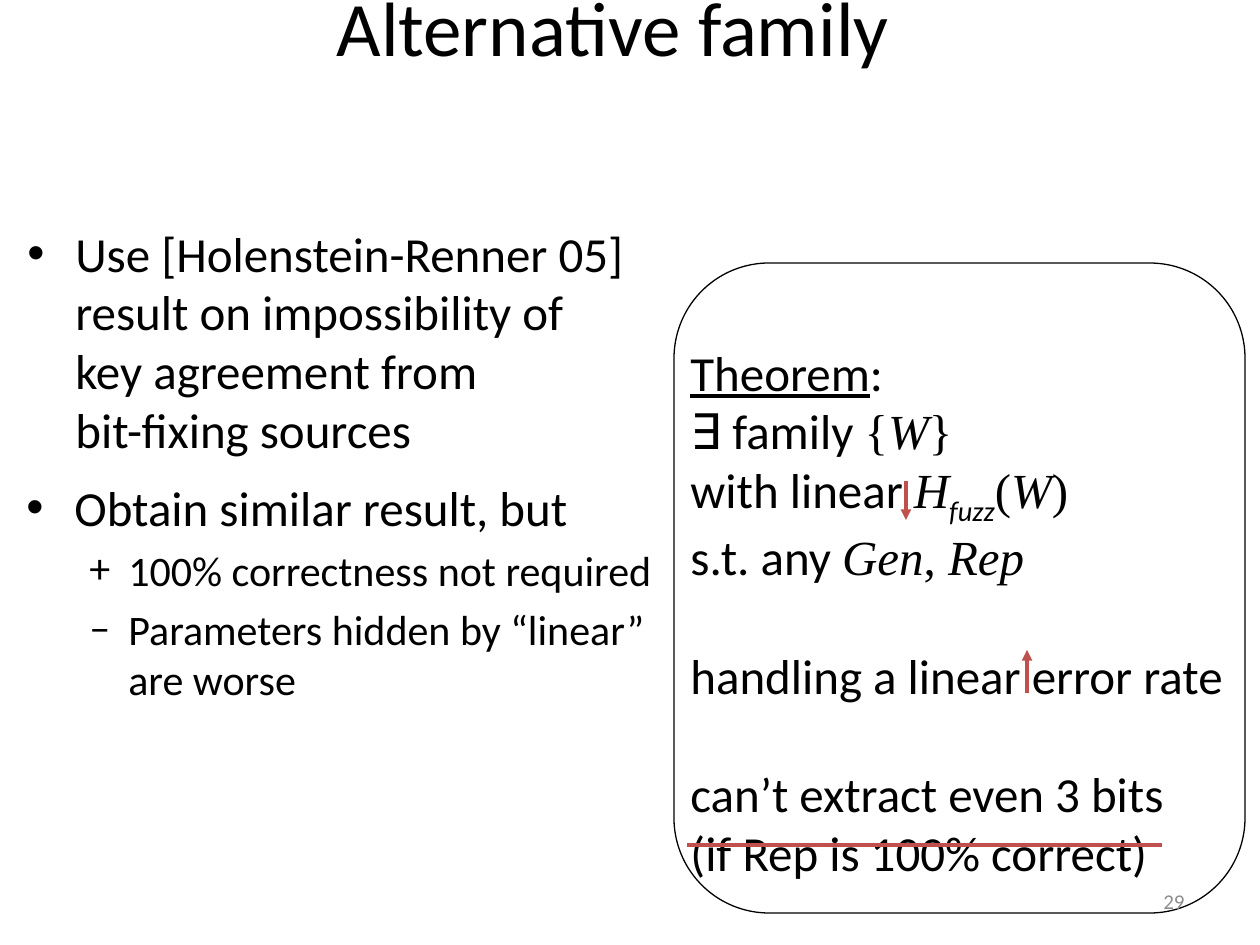
from pptx import Presentation
from pptx.dml.color import RGBColor
from pptx.enum.shapes import MSO_CONNECTOR, MSO_SHAPE
from pptx.enum.text import MSO_ANCHOR, PP_ALIGN
from pptx.oxml.ns import qn
from pptx.util import Emu, Pt
from lxml.etree import SubElement

BLACK, RED, GRAY = "000000", "C0504D", "8C8C8C"
MATH = dict(font="Times New Roman")
VAR = dict(font="Times New Roman", italic=True)

SOURCE_POINT = "Use [Holenstein-Renner 05]\nresult on impossibility of\nkey agreement from\nbit-fixing sources"
RESULT_POINTS = [
    ("Obtain similar result, but", dict(size=28, bullet="•", margin=48, hang=48)),
    ("100% correctness not required", dict(size=24, bullet="+", margin=102, hang=39, level=1, before=4.8)),
    ("Parameters hidden by “linear”\nare worse", dict(size=24, bullet="–", margin=102, hang=39, level=1, before=4.8)),
]
THEOREM = [
    (0, [("Theorem", dict(underline=True)), (":", {})]),
    (0, [("∃ family ", {}), ("{", MATH), ("W", VAR), ("}", MATH)]),
    (0, [("with linear ", {}), ("H", VAR), ("fuzz", dict(italic=True, base=-25000)),
         ("(", MATH), ("W", VAR), (")", MATH)]),
    (0, [("s.t. any ", {}), ("Gen", VAR), (", ", MATH), ("Rep", VAR)]),
    (34, [("handling a linear error rate", {})]),
    (34, [("can’t extract even 3 bits", {})]),
    (0, [("(if Rep is 100% correct)", {})]),
]
LINES = [
    ((687, 845), (1162, 845), False),
    ((906, 520), (906, 481), True),
    ((1027, 650), (1027, 693), True),
]


def px(n):
    return Emu(round(n * 914400 / 126))


def rgb(color):
    return RGBColor.from_string(color)


def add_run(p, text, size=28, font="Calibri", color=BLACK, italic=False, underline=False, base=0):
    for i, line in enumerate(text.split("\n")):
        if i:
            p.add_line_break()
        r = p.add_run()
        r.text = line
        f = r.font
        f.size, f.name, f.italic, f.underline = Pt(size), font, italic, underline
        f.color.rgb = rgb(color)
        if base:
            r._r.get_or_add_rPr().set("baseline", str(base))


def add_box(x, y, w, h, anchor=MSO_ANCHOR.TOP):
    tf = s.shapes.add_textbox(px(x), px(y), px(w), px(h)).text_frame
    tf.word_wrap = True
    tf.vertical_anchor = anchor
    return tf


def add_par(tf, runs, align=PP_ALIGN.LEFT, before=0, bullet=None, margin=0, hang=0, level=0):
    p = tf.add_paragraph() if tf.paragraphs[0].runs else tf.paragraphs[0]
    p.alignment, p.level, p.space_before = align, level, Pt(before)
    if bullet:
        pPr = p._p.get_or_add_pPr()
        pPr.set("marL", str(px(margin)))
        pPr.set("indent", str(-px(hang)))
        SubElement(pPr, qn("a:buFont"), typeface="Arial" if bullet == "•" else "Calibri")
        SubElement(pPr, qn("a:buChar"), char=bullet)
    for text, fmt in runs:
        add_run(p, text, **fmt)


def add_line(start, end, arrow):
    c = s.shapes.add_connector(MSO_CONNECTOR.STRAIGHT, *map(px, start + end))
    c.line.color.rgb = rgb(RED)
    c.line.width = Pt(2)
    if arrow:
        SubElement(c.line._get_or_add_ln(), qn("a:headEnd"), type="triangle")
    SubElement(c._element.spPr, qn("a:effectLst"))


prs = Presentation()
prs.slide_width, prs.slide_height = px(1260), px(945)
s = prs.slides.add_slide(prs.slide_layouts[6])

frame = s.shapes.add_shape(MSO_SHAPE.ROUNDED_RECTANGLE, px(674), px(263), px(571), px(650))
frame.shadow.inherit = False
frame.fill.background()
frame.line.color.rgb = rgb(BLACK)
frame.line.width = Pt(0.75)

tf = add_box(14, 471, 735, 66)
for text, fmt in RESULT_POINTS:
    par = dict(fmt)
    size = par.pop("size")
    add_par(tf, [(text, dict(size=size))], **par)

tf = add_box(678, 336, 586, 200)
for before, runs in THEOREM:
    add_par(tf, runs, before=before)

title = add_box(-68, -33, 1362, 118, MSO_ANCHOR.MIDDLE)
add_par(title, [("Alternative family", dict(size=44))], align=PP_ALIGN.CENTER)

tf = add_box(15, 217, 769, 66)
add_par(tf, [(SOURCE_POINT, {})], bullet="•", margin=48, hang=48)

for start, end, arrow in LINES:
    add_line(start, end, arrow)

number = add_box(903, 876, 294, 50, MSO_ANCHOR.MIDDLE)
add_par(number, [("29", dict(size=12, color=GRAY))], align=PP_ALIGN.RIGHT)

prs.save("out.pptx")
